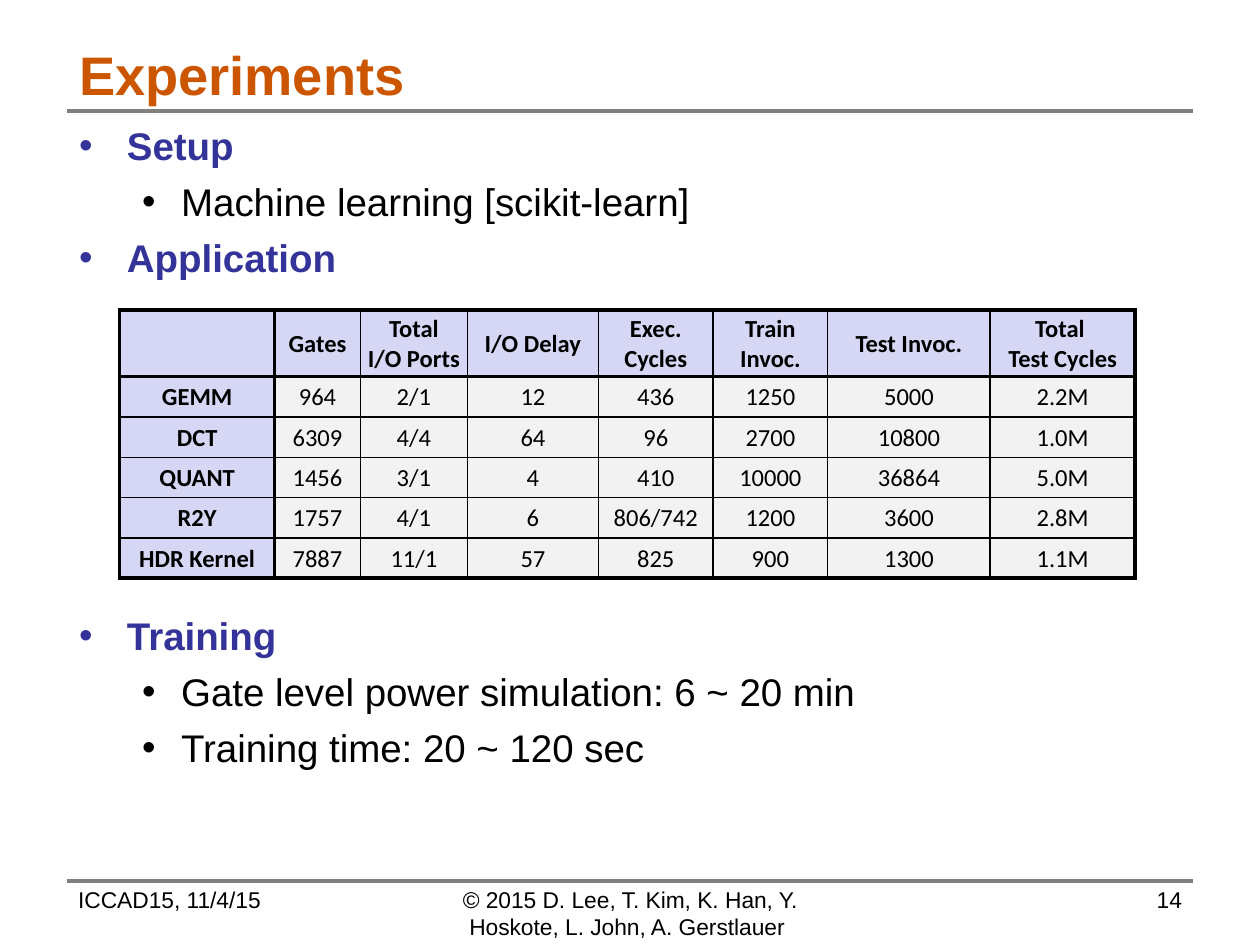
import dataclasses

import lxml.etree
import pptx
import pptx.dml.color
import pptx.enum.shapes
import pptx.enum.text
import pptx.oxml.ns
import pptx.util

Inches, Pt = pptx.util.Inches, pptx.util.Pt
Align, Anchor = pptx.enum.text.PP_ALIGN, pptx.enum.text.MSO_ANCHOR
qn = pptx.oxml.ns.qn


@dataclasses.dataclass(frozen=True)
class Theme:
    font: str = "Arial"
    table_font: str = "Calibri"
    title: str = "CC5500"
    heading: str = "333399"
    ink: str = "000000"
    rule: str = "808080"
    header_fill: str = "D6D6F5"
    body_fill: str = "F2F2F2"
    title_size: float = 31
    body_size: float = 22
    table_size: float = 14
    footer_size: float = 13
    heavy: float = 2.25
    thin: float = 1


@dataclasses.dataclass(frozen=True)
class Bullet:
    text: str
    level: int = 0
    before: float = 5.5


HEADER = ["", "Gates", "Total\nI/O Ports", "I/O Delay", "Exec. Cycles",
          "Train Invoc.", "Test Invoc.", "Total \vTest Cycles"]
APPLICATIONS = [
    ["GEMM", "964", "2/1", "12", "436", "1250", "5000", "2.2M"],
    ["DCT", "6309", "4/4", "64", "96", "2700", "10800", "1.0M"],
    ["QUANT", "1456", "3/1", "4", "410", "10000", "36864", "5.0M"],
    ["R2Y", "1757", "4/1", "6", "806/742", "1200", "3600", "2.8M"],
    ["HDR Kernel", "7887", "11/1", "57", "825", "900", "1300", "1.1M"],
]
COLUMN_WIDTHS = [1.23, 0.68, 0.85, 1.04, 0.91, 0.91, 1.29, 1.15]
ROW_HEIGHTS = [0.53] + [0.32] * len(APPLICATIONS)

# The space before "Training" leaves room for the table.
BULLETS = [
    Bullet("Setup", before=2),
    Bullet("Machine learning [scikit-learn]", level=1),
    Bullet("Application"),
    Bullet("Training", before=190),
    Bullet("Gate level power simulation: 6 ~ 20 min", level=1),
    Bullet("Training time: 20 ~ 120 sec", level=1),
]


class SlideBuilder:
    def __init__(self, page, theme):
        self.page = page
        self.theme = theme

    def add_span(self, para, text, size, color, bold=False, font=None):
        span = para.add_run()
        span.text = text
        span.font.size = Pt(size)
        span.font.name = font or self.theme.font
        span.font.bold = bold
        span.font.color.rgb = pptx.dml.color.RGBColor.from_string(color)

    def frame(self, left, top, width, height, inset=(0.1, 0.05)):
        """Add a wrapping text box and return its text frame."""
        box = self.page.shapes.add_textbox(*map(Inches, (left, top, width, height)))
        frame = box.text_frame
        frame.word_wrap = True
        frame.margin_left = frame.margin_right = Inches(inset[0])
        frame.margin_top = frame.margin_bottom = Inches(inset[1])
        return frame

    def rule(self, y):
        line = self.page.shapes.add_connector(
            pptx.enum.shapes.MSO_CONNECTOR.STRAIGHT,
            Inches(0.53), Inches(y), Inches(9.47), Inches(y))
        line.line.color.rgb = pptx.dml.color.RGBColor.from_string(self.theme.rule)
        line.line.width = Pt(self.theme.heavy)
        lxml.etree.SubElement(line._element.spPr, qn("a:effectLst"))

    def title(self, text):
        frame = self.frame(0.53, 0.29, 8.94, 0.59)
        frame.vertical_anchor = Anchor.MIDDLE
        self.add_span(frame.paragraphs[0], text, self.theme.title_size,
                      self.theme.title, bold=True)

    def footer(self, text, left, width, align):
        para = self.frame(left, 6.99, width, 0.46, inset=(0.09, 0.04)).paragraphs[0]
        para.alignment = align
        self.add_span(para, text, self.theme.footer_size, self.theme.ink)

    def bullets(self, items):
        frame = self.frame(0.53, 0.92, 9.14, 5.83)
        for index, item in enumerate(items):
            para = frame.add_paragraph() if index else frame.paragraphs[0]
            para.level = item.level
            para.space_before = Pt(item.before)
            margin, indent = [(0.38, -0.38), (0.81, -0.31)][item.level]
            props = para._p.get_or_add_pPr()
            props.set("marL", str(Inches(margin)))
            props.set("indent", str(Inches(indent)))
            lxml.etree.SubElement(props, qn("a:buFont"), typeface=self.theme.font)
            lxml.etree.SubElement(props, qn("a:buChar"), char="•")
            is_heading = item.level == 0
            color = self.theme.heading if is_heading else self.theme.ink
            self.add_span(para, item.text, self.theme.body_size, color, bold=is_heading)

    def borders(self, cell, heavy_sides):
        props = cell._tc.get_or_add_tcPr()
        for side in "LRTB":
            width = self.theme.heavy if side in heavy_sides else self.theme.thin
            line = lxml.etree.SubElement(props, qn(f"a:ln{side}"), w=str(Pt(width)))
            fill = lxml.etree.SubElement(line, qn("a:solidFill"))
            lxml.etree.SubElement(fill, qn("a:srgbClr"), val=self.theme.ink)

    def cell(self, cell, text, is_header):
        cell.fill.solid()
        fill = self.theme.header_fill if is_header else self.theme.body_fill
        cell.fill.fore_color.rgb = pptx.dml.color.RGBColor.from_string(fill)
        cell.vertical_anchor = Anchor.MIDDLE
        cell.margin_left = cell.margin_right = cell.margin_top = Inches(0.01)
        cell.margin_bottom = 0
        for index, paragraph_text in enumerate(text.split("\n")):
            para = cell.text_frame.add_paragraph() if index else cell.text_frame.paragraphs[0]
            para.alignment = Align.CENTER
            para.font.size = Pt(self.theme.table_size)
            for part, line in enumerate(paragraph_text.split("\v")):
                if part:
                    para.add_line_break()
                if line:
                    self.add_span(para, line, self.theme.table_size, self.theme.ink,
                                  bold=is_header, font=self.theme.table_font)

    def table(self, rows, left, top, widths, heights):
        """Add a table with heavy lines around it and after its header row and column."""
        table = self.page.shapes.add_table(
            len(rows), len(widths), Inches(left), Inches(top),
            Inches(sum(widths)), Inches(sum(heights))).table
        table.first_row = table.horz_banding = False
        for column, width in zip(table.columns, widths):
            column.width = Inches(width)
        for row, height in zip(table.rows, heights):
            row.height = Inches(height)
        heavy_x, heavy_y = {0, 1, len(widths)}, {0, 1, len(rows)}
        for y, row in enumerate(rows):
            for x, text in enumerate(row):
                edges = {"L": x in heavy_x, "R": x + 1 in heavy_x,
                         "T": y in heavy_y, "B": y + 1 in heavy_y}
                cell = table.cell(y, x)
                self.borders(cell, [side for side, heavy in edges.items() if heavy])
                self.cell(cell, text, is_header=x == 0 or y == 0)


def main():
    deck = pptx.Presentation()
    deck.slide_width, deck.slide_height = Inches(10), Inches(7.5)
    slide = SlideBuilder(deck.slides.add_slide(deck.slide_layouts[6]), Theme())
    for y in (0.88, 6.99):
        slide.rule(y)
    slide.title("Experiments")
    slide.bullets(BULLETS)
    slide.footer("ICCAD15, 11/4/15", 0.53, 2.35, Align.LEFT)
    slide.footer("© 2015 D. Lee, T. Kim, K. Han, Y. Hoskote, L. John, A. Gerstlauer ",
                 3.56, 2.88, Align.CENTER)
    slide.footer("14", 7.12, 2.35, Align.RIGHT)
    slide.table([HEADER] + APPLICATIONS, 0.95, 2.46, COLUMN_WIDTHS, ROW_HEIGHTS)
    deck.save("out.pptx")


if __name__ == "__main__":
    main()
